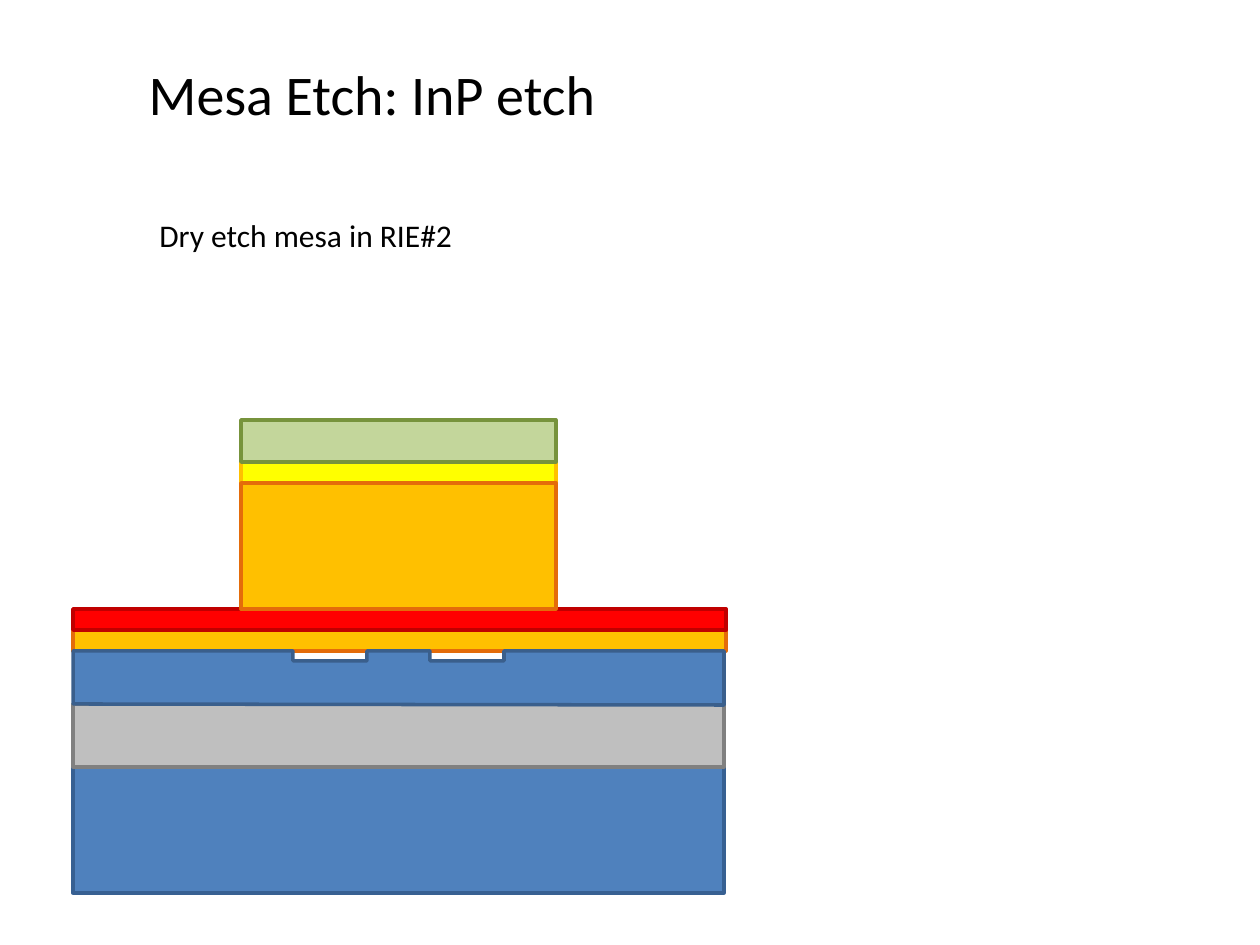
from pptx import Presentation
from pptx.dml.color import RGBColor
from pptx.enum.shapes import MSO_SHAPE as Preset
from pptx.enum.text import MSO_ANCHOR as Anchor, MSO_AUTO_SIZE as AutoSize, PP_ALIGN as Align
from pptx.util import Pt

PX = 914400 / 126
MESA_LEFT, MESA_WIDTH = 168, 315
WAFER_WIDTH, EPI_WIDTH = 651, 653

LAYERS = [
    (MESA_LEFT, 42, MESA_WIDTH, 21, "FFFF00", "FFC000"),
    (0, 210, EPI_WIDTH, 21, "FFC000", "E46C0A"),
    (0, 189, EPI_WIDTH, 21, "FF0000", "C00000"),
    (MESA_LEFT, 63, MESA_WIDTH, 126, "FFC000", "E46C0A"),
    (0, 347, WAFER_WIDTH, 126, "4F81BD", "376092"),
    (0, 284, WAFER_WIDTH, 63, "BFBFBF", "808080"),
    (MESA_LEFT, 0, MESA_WIDTH, 42, "C3D69B", "77933C"),
]
NOTCHES = [(220, 294), (357, 431)]
NOTCH_DEPTH = 10


def px(length):
    """Turn pixels into EMU."""
    return round(length * PX)


def color(value):
    """Turn a hex string into a colour."""
    return RGBColor.from_string(value)


def paint(shape, fill, line):
    """Give a shape its fill and outline."""
    shape.shadow.inherit = False
    shape.fill.solid()
    shape.fill.fore_color.rgb = color(fill)
    shape.line.color.rgb = color(line)
    shape.line.width = Pt(2)


def write(shape, text, size, wrap):
    """Write one left-aligned line from the top of a shape."""
    frame = shape.text_frame
    frame.word_wrap = wrap
    frame.auto_size = AutoSize.SHAPE_TO_FIT_TEXT
    frame.vertical_anchor = Anchor.TOP
    paragraph = frame.paragraphs[0]
    paragraph.alignment = Align.LEFT
    run = paragraph.add_run()
    run.text = text
    run.font.name = "Calibri"
    run.font.size = Pt(size)
    run.font.color.rgb = color("000000")


def add_title(slide, left, top, width, height):
    """Place the slide title."""
    title = slide.shapes.title
    title.left, title.top, title.width, title.height = map(px, (left, top, width, height))
    write(title, "Mesa Etch: InP etch", 32, True)


def add_step(slide, left, top, width, height):
    """Place the description of the process step."""
    box = slide.shapes.add_textbox(*map(px, (left, top, width, height)))
    write(box, "Dry etch mesa in RIE#2", 18, False)


def add_notched_layer(slide, left, top, width, height):
    """Draw the layer with notches cut into its upper edge."""
    points = [(0, 0)]
    for start, end in NOTCHES:
        points += [(start, 0), (start, NOTCH_DEPTH), (end, NOTCH_DEPTH), (end, 0)]
    points += [(width, 0), (width, height), (0, height - 1)]
    corners = [(px(left + x), px(top + y)) for x, y in points]
    builder = slide.shapes.build_freeform(*corners[0])
    builder.add_line_segments(corners[1:], close=True)
    paint(builder.convert_to_shape(), "4F81BD", "3A5F8C")


def add_stack(slide, left, top):
    """Draw the cross-section of the etched layer stack."""
    for x, y, width, height, fill, line in LAYERS:
        box = map(px, (left + x, top + y, width, height))
        paint(slide.shapes.add_shape(Preset.RECTANGLE, *box), fill, line)
    add_notched_layer(slide, left, top + 231, WAFER_WIDTH, 54)


def main():
    """Build and save the slide."""
    presentation = Presentation()
    presentation.slide_width, presentation.slide_height = px(1260), px(945)
    slide = presentation.slides.add_slide(presentation.slide_layouts[5])
    add_stack(slide, 73, 420)
    add_title(slide, 136, 53, 914, 80)
    add_step(slide, 147, 210, 321, 50)
    presentation.save("out.pptx")


if __name__ == "__main__":
    main()
